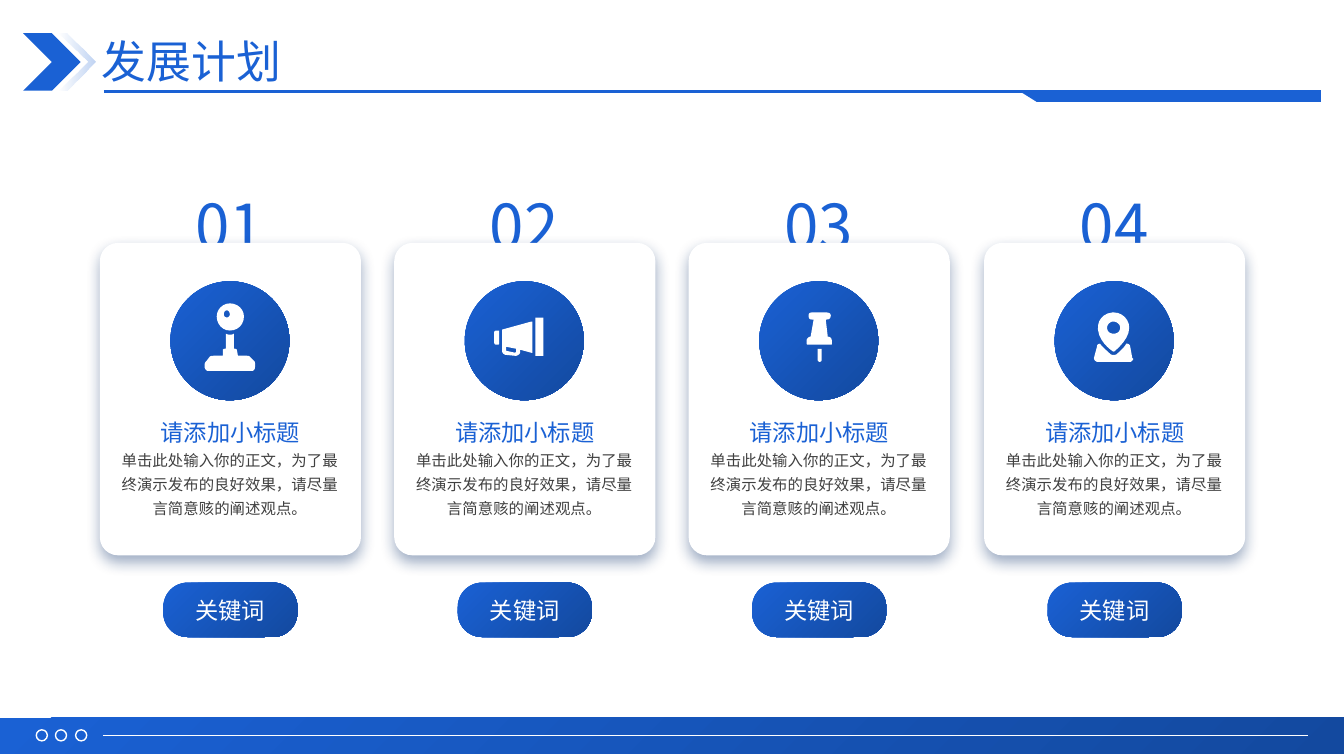
import lxml.etree
import pptx
import pptx.dml.color
import pptx.enum.shapes
import pptx.enum.text
import pptx.oxml.ns
import pptx.util

BLUE = pptx.dml.color.RGBColor(0x1A, 0x61, 0xD4)
NAVY = pptx.dml.color.RGBColor(0x13, 0x49, 0x9F)
SHADOW = pptx.dml.color.RGBColor(0x0D, 0x31, 0x6A)
GREY = pptx.dml.color.RGBColor(0x40, 0x40, 0x40)
WHITE = pptx.dml.color.RGBColor(0xFF, 0xFF, 0xFF)
SHAPE = pptx.enum.shapes.MSO_SHAPE
CENTER = pptx.enum.text.PP_ALIGN.CENTER
LEFT = pptx.enum.text.PP_ALIGN.LEFT
MIDDLE = pptx.enum.text.MSO_ANCHOR.MIDDLE
TOP = pptx.enum.text.MSO_ANCHOR.TOP
BODY = "单击此处输入你的正文，为了最终演示发布的良好效果，请尽量言简意赅的阐述观点。"

JOYSTICK = [
    [(224, 331), (225, 332, 227, 332, 228, 332), (230, 332, 231, 332, 232, 331),
     (232, 346), (233, 346), (234, 346, 235, 347, 235, 347), (236, 353), (245, 353),
     (246, 353, 247, 353, 248, 354), (252, 358), (253, 359, 253, 360, 253, 362),
     (253, 364), (253, 366, 252, 368, 250, 368), (206, 368),
     (205, 368, 203, 366, 203, 364), (203, 362), (203, 360, 204, 359, 205, 358),
     (208, 354), (209, 353, 211, 353, 212, 353), (221, 353), (221, 347),
     (221, 347, 222, 346, 223, 346), (224, 346)],
    [(225, 308), (223, 308, 222, 310, 222, 312), (222, 313, 223, 315, 225, 315),
     (227, 315, 228, 313, 228, 312), (228, 310, 227, 308, 225, 308)],
    [(228, 301), (236, 301, 242, 307, 242, 314), (242, 322, 236, 328, 228, 328),
     (221, 328, 215, 322, 215, 314), (215, 307, 221, 301, 228, 301)],
]
MEGAPHONE = [
    [(502, 344), (502, 348), (511, 350), (512, 349), (512, 346)],
    [(494, 328), (495, 328), (495, 341), (495, 342, 494, 342, 494, 342), (492, 342),
     (491, 342, 490, 341, 490, 339), (490, 330), (490, 329, 491, 328, 492, 328)],
    [(527, 319), (528, 319), (528, 350), (527, 350), (516, 347), (516, 349),
     (516, 350, 515, 352, 514, 352), (513, 353, 512, 353, 511, 353), (501, 352),
     (499, 351, 498, 350, 498, 348), (498, 327)],
    [(531, 315), (539, 315), (539, 353), (531, 353)],
]
PUSHPIN = [
    [(811, 346), (815, 346), (815, 357), (815, 358, 814, 359, 813, 359),
     (812, 359, 811, 358, 811, 357)],
    [(805, 310), (820, 310), (822, 310, 824, 311, 824, 313),
     (824, 316, 822, 317, 820, 317), (819, 317), (821, 334),
     (824, 334, 825, 336, 825, 338), (825, 341), (825, 342, 825, 342, 824, 342),
     (802, 342), (801, 342, 800, 342, 800, 341), (800, 338),
     (800, 336, 802, 334, 804, 334), (807, 317), (805, 317),
     (803, 317, 802, 316, 802, 313), (802, 311, 803, 310, 805, 310)],
]
LOCATION = [
    [(1091, 341), (1094, 345, 1098, 348, 1101, 351), (1102, 352, 1103, 352, 1104, 352),
     (1106, 352, 1107, 352, 1108, 351), (1111, 348, 1115, 345, 1117, 341), (1118, 341),
     (1119, 341, 1121, 342, 1121, 344), (1123, 355), (1124, 356),
     (1124, 357, 1122, 359, 1121, 359), (1088, 359), (1086, 358, 1085, 357, 1085, 355),
     (1088, 344), (1088, 342, 1089, 341, 1091, 341)],
    [(1104, 319), (1101, 319, 1098, 322, 1098, 325), (1098, 329, 1101, 331, 1104, 331),
     (1105, 331), (1108, 331, 1111, 329, 1111, 325), (1111, 322, 1108, 319, 1104, 319)],
    [(1105, 310), (1113, 310, 1120, 317, 1120, 325), (1120, 336, 1109, 345, 1106, 348),
     (1105, 349, 1104, 349, 1103, 348), (1100, 346, 1090, 338, 1089, 327),
     (1088, 318, 1094, 311, 1103, 310), (1103, 310, 1104, 310, 1105, 310)],
]


class SlideBuilder:
    font_name = "Noto Sans CJK SC"
    scale = 9144
    curve_steps = 6

    def __init__(self, presentation):
        self.slide = presentation.slides.add_slide(presentation.slide_layouts[6])
        self.shapes = self.slide.shapes

    def px(self, *lengths):
        return [pptx.util.Emu(round(length * self.scale)) for length in lengths]

    def assign(self, target, values):
        for name, value in values.items():
            setattr(target, name, value)

    def paint(self, shape, fill, angle=315, line=None):
        shape.shadow.inherit = False
        if fill is None:
            shape.fill.background()
        elif isinstance(fill, list):
            shape.fill.gradient()
            shape.fill.gradient_angle = angle
            for stop, color in zip(shape.fill.gradient_stops, fill):
                stop.color.rgb = color
        else:
            shape.fill.solid()
            shape.fill.fore_color.rgb = fill
        if line is None:
            shape.line.fill.background()
        else:
            shape.line.color.rgb = line
            shape.line.width = pptx.util.Pt(1)

    def child(self, parent, tag, **attributes):
        return lxml.etree.SubElement(parent, pptx.oxml.ns.qn(tag), attributes)

    def preset(self, kind, box, fill, adjustment=None, line=None):
        shape = self.shapes.add_shape(kind, *self.px(*box))
        if adjustment is not None:
            shape.adjustments[0] = adjustment
        self.paint(shape, fill, line=line)
        return shape

    def cast_shadow(self, shape, color):
        effects = shape.element.spPr.find(pptx.oxml.ns.qn("a:effectLst"))
        shadow = self.child(effects, "a:outerShdw", blurRad=str(pptx.util.Pt(10.5)),
                            dist=str(pptx.util.Pt(4.4)), dir="5400000",
                            algn="t", rotWithShape="0")
        self.child(self.child(shadow, "a:srgbClr", val=str(color)), "a:alpha", val="40000")

    def flatten(self, contour):
        points = []
        for step in contour:
            if len(step) == 2:
                points.append(step)
                continue
            start, first, second, end = points[-1], step[:2], step[2:4], step[4:]
            for index in range(1, self.curve_steps + 1):
                t = index / self.curve_steps
                weights = ((1 - t) ** 3, 3 * t * (1 - t) ** 2, 3 * t * t * (1 - t), t ** 3)
                points.append(tuple(
                    sum(weight * value for weight, value in zip(weights, axis))
                    for axis in zip(start, first, second, end)))
        return [self.px(*point) for point in points]

    def outline(self, contours, fill, angle=315):
        builder = None
        for contour in contours:
            start, *rest = self.flatten(contour)
            if builder is None:
                builder = self.shapes.build_freeform(*start)
            else:
                builder.move_to(*start)
            builder.add_line_segments(rest, close=True)
        shape = builder.convert_to_shape()
        self.paint(shape, fill, angle)
        return shape

    def rule(self, left, right, y, color, width):
        connector = self.shapes.add_connector(
            pptx.enum.shapes.MSO_CONNECTOR.STRAIGHT, *self.px(left, y, right, y))
        connector.line.color.rgb = color
        connector.line.width = pptx.util.Pt(width)
        self.child(connector.element.spPr, "a:effectLst")

    def label(self, shape, text, size, color, align=CENTER, anchor=TOP, inset=(0, 0), spacing=None):
        horizontal, vertical = self.px(*inset)
        self.assign(shape.text_frame, {
            "word_wrap": True, "vertical_anchor": anchor,
            "margin_left": horizontal, "margin_right": horizontal,
            "margin_top": vertical, "margin_bottom": vertical})
        paragraph = shape.text_frame.paragraphs[0]
        self.assign(paragraph, {"alignment": align, "line_spacing": spacing})
        run = paragraph.add_run()
        run.text = text
        self.assign(run.font, {"size": pptx.util.Pt(size), "name": self.font_name})
        run.font.color.rgb = color
        properties = run._r.get_or_add_rPr()
        self.child(properties, "a:ea", typeface=self.font_name)

    def text(self, box, *content, **style):
        self.label(self.shapes.add_textbox(*self.px(*box)), *content, **style)


def draw_frame(builder):
    builder.preset(SHAPE.CHEVRON, (23, 33, 57, 57), BLUE)
    accent = builder.outline(
        [[(58, 33), (67, 33), (95, 61), (67, 90), (58, 90), (87, 61)]], [BLUE, BLUE], 0)
    for color, alpha in zip(accent.element.iter(pptx.oxml.ns.qn("a:srgbClr")), ("0", "28000")):
        builder.child(color, "a:alpha", val=alpha)
    builder.rule(103, 1310, 91, BLUE, 2.25)
    builder.outline([[(1012, 91), (1310, 91), (1310, 101), (1028, 101)]], BLUE)
    builder.preset(SHAPE.RECTANGLE, (0, 712, 1333, 36), [BLUE, NAVY])
    for left in (36, 55, 75):
        builder.preset(SHAPE.OVAL, (left, 724, 11, 11), None, line=WHITE)
    builder.rule(102, 1297, 730, WHITE, 0.5)
    builder.text((91, 36, 377, 55), "发展计划", 32, BLUE,
                 align=LEFT, anchor=MIDDLE, inset=(10, 5), spacing=0.9)


def draw_card(builder, index, icon):
    left = 99 + 877 * index // 3
    builder.text((left + 82, 186, 94, 74), f"{index + 1:02}", 44.2, BLUE)
    card = builder.preset(SHAPE.ROUNDED_RECTANGLE, (left, 241, 259, 310), WHITE, 0.07)
    builder.cast_shadow(card, SHADOW)
    builder.preset(SHAPE.OVAL, (left + 70, 279, 118, 118), [BLUE, NAVY])
    builder.text((left + 21, 442, 216, 70), BODY, 11, GREY, spacing=1.3)
    builder.text((left + 42, 415, 175, 28), "请添加小标题", 16.6, BLUE)
    keyword = builder.preset(
        SHAPE.ROUNDED_RECTANGLE, (left + 63, 578, 133, 54), [BLUE, NAVY], 0.447)
    builder.label(keyword, "关键词", 16.6, WHITE, anchor=MIDDLE, inset=(9, 5))
    builder.outline(icon, WHITE)


def main():
    presentation = pptx.Presentation()
    presentation.slide_width = pptx.util.Inches(13.33)
    presentation.slide_height = pptx.util.Inches(7.5)
    builder = SlideBuilder(presentation)
    draw_frame(builder)
    for index, icon in enumerate((JOYSTICK, MEGAPHONE, PUSHPIN, LOCATION)):
        draw_card(builder, index, icon)
    presentation.save("out.pptx")


if __name__ == "__main__":
    main()
